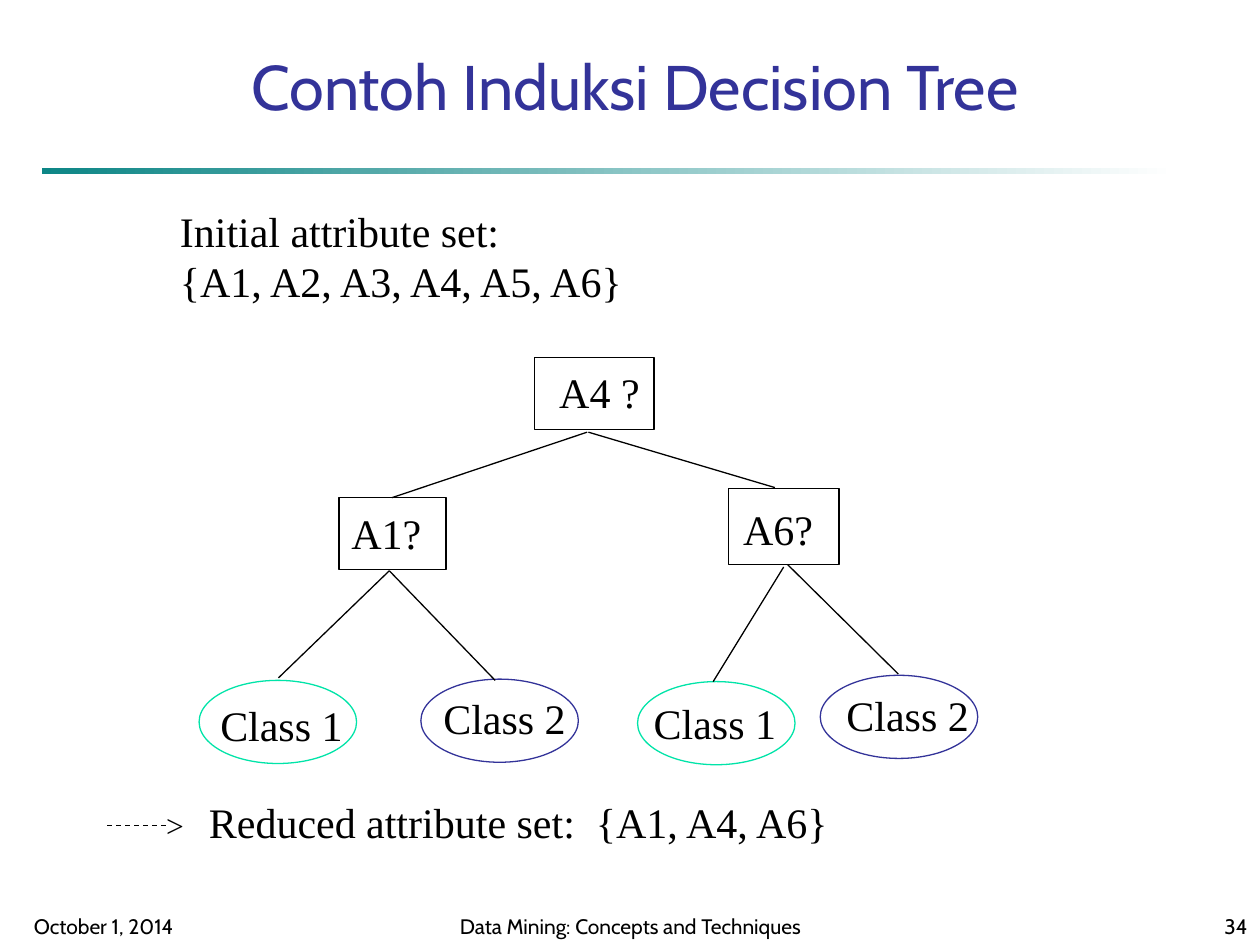
from collections import namedtuple

from lxml import etree
from pptx import Presentation
from pptx.dml.color import RGBColor
from pptx.enum import dml, shapes, text
from pptx.oxml.ns import qn
from pptx.util import Inches, Pt

BLACK = RGBColor(0x00, 0x00, 0x00)
WHITE = RGBColor(0xFF, 0xFF, 0xFF)
TEAL = RGBColor(0x0D, 0x86, 0x86)
INDIGO = RGBColor(0x33, 0x33, 0x99)
MINT = RGBColor(0x00, 0xE4, 0xA8)
SANS, SERIF = "Cabin", "Times New Roman"
LEFT, CENTER, RIGHT = text.PP_ALIGN.LEFT, text.PP_ALIGN.CENTER, text.PP_ALIGN.RIGHT
RECTANGLE, OVAL = shapes.MSO_SHAPE.RECTANGLE, shapes.MSO_SHAPE.OVAL

Box = namedtuple("Box", "left top width height")


def within(box, left, top, width, height):
    """Return a box placed relative to the corner of another box."""
    return Box(box.left + Inches(left), box.top + Inches(top), Inches(width), Inches(height))


def add_text(page, box, lines, size=24, font=SERIF, color=BLACK, align=LEFT,
             anchor=text.MSO_ANCHOR.TOP, wrap=False):
    """Add a text box with one paragraph for each line."""
    frame = page.shapes.add_textbox(*box).text_frame
    frame.word_wrap = wrap
    frame.vertical_anchor = anchor
    for index, line in enumerate(lines):
        para = frame.add_paragraph() if index else frame.paragraphs[0]
        para.alignment = align
        span = para.add_run()
        span.text = line
        span.font.size = Pt(size)
        span.font.name = font
        span.font.color.rgb = color


def add_outline(page, box, kind, color):
    """Add an unfilled shape with a thin outline."""
    shape = page.shapes.add_shape(kind, *box)
    shape.shadow.inherit = False
    shape.fill.background()
    shape.line.color.rgb = color
    shape.line.width = Pt(0.75)


def add_line(page, box, start, end, dash=None):
    """Add a thin black line between two points relative to a box."""
    points = [edge + Inches(offset) for point in (start, end)
              for edge, offset in zip(box[:2], point)]
    line = page.shapes.add_connector(shapes.MSO_CONNECTOR.STRAIGHT, *points)
    line.line.color.rgb = BLACK
    line.line.width = Pt(0.75)
    if dash:
        line.line.dash_style = dash
    etree.SubElement(line._element.spPr, qn("a:effectLst"))


def add_header(page, box):
    """Add the title and the fading rule below it."""
    rule = page.shapes.add_shape(RECTANGLE, *within(box, 0, 1, 9, 0.05))
    rule.shadow.inherit = False
    rule.line.fill.background()
    rule.fill.gradient()
    rule.fill.gradient_angle = 0
    for stop, color, position in zip(rule.fill.gradient_stops, (TEAL, WHITE), (0, 1)):
        stop.color.rgb = color
        stop.position = position
    add_text(page, within(box, 0.5, 0, 8.42, 0.71), ["Contoh Induksi Decision Tree"],
             36, SANS, INDIGO, CENTER, wrap=True)


def add_footer(page, box):
    """Add the date, the source title and the page number."""
    for left, width, label, align in (
        (0.17, 2.08, "October 1, 2014", LEFT),
        (3.42, 3.17, "Data Mining: Concepts and Techniques", CENTER),
        (7.92, 2.08, "34", RIGHT),
    ):
        add_text(page, within(box, left, 0, width, 0.42), [label], 12, SANS,
                 align=align, anchor=text.MSO_ANCHOR.BOTTOM, wrap=True)


def add_tree(page, box):
    """Add the decision nodes, the class leaves and their branches."""
    for left, top, width, height, label, label_left, label_top in (
        (2.66, 0, 0.95, 0.57, "A4 ?", 2.76, 0.02),
        (1.11, 1.11, 0.85, 0.57, "A1?", 1.11, 1.14),
        (4.2, 1.04, 0.88, 0.6, "A6?", 4.22, 1.11),
    ):
        add_outline(page, within(box, left, top, width, height), RECTANGLE, BLACK)
        add_text(page, within(box, label_left, label_top, 0.97, 0.5), [label])
    for left, top, label, color, label_left, label_top in (
        (0, 2.56, "Class 1", MINT, 0.07, 2.66),
        (1.76, 2.55, "Class 2", INDIGO, 1.84, 2.61),
        (3.48, 2.57, "Class 1", MINT, 3.51, 2.65),
        (4.93, 2.52, "Class 2", INDIGO, 5.04, 2.58),
    ):
        add_outline(page, within(box, left, top, 1.25, 0.66), OVAL, color)
        add_text(page, within(box, label_left, label_top, 1.17, 0.5), [label])
    for start, end in (
        ((3.08, 0.59), (1.53, 1.11)),
        ((3.09, 0.59), (4.57, 1.03)),
        ((1.51, 1.69), (0.63, 2.54)),
        ((1.51, 1.69), (2.35, 2.56)),
        ((4.64, 1.66), (4.08, 2.57)),
        ((4.67, 1.64), (5.55, 2.51)),
    ):
        add_line(page, box, start, end)


def add_result(page, box):
    """Add the dashed arrow and the reduced attribute set."""
    add_line(page, box, (0, 0.28), (0.48, 0.28), dml.MSO_LINE.DASH)
    add_text(page, within(box, 0.37, 0.08, 0.34, 0.4), [">"], 18)
    add_text(page, within(box, 0.71, 0, 5.15, 0.5), ["Reduced attribute set:  {A1, A4, A6}"])


def main():
    """Build the slide and save it."""
    deck = Presentation()
    deck.slide_width, deck.slide_height = Inches(10), Inches(7.5)
    page = deck.slides.add_slide(deck.slide_layouts[6])
    whole = Box(0, 0, deck.slide_width, deck.slide_height)
    add_header(page, within(whole, 0.33, 0.33, 9, 1.05))
    add_footer(page, within(whole, 0, 7.08, 10, 0.42))
    add_text(page, within(whole, 1.33, 1.58, 3.8, 0.9),
             ["Initial attribute set:", "{A1, A2, A3, A4, A5, A6}"])
    add_tree(page, within(whole, 1.58, 2.84, 6.21, 3.23))
    add_result(page, within(whole, 0.85, 6.27, 5.86, 0.5))
    deck.save("out.pptx")


if __name__ == "__main__":
    main()
